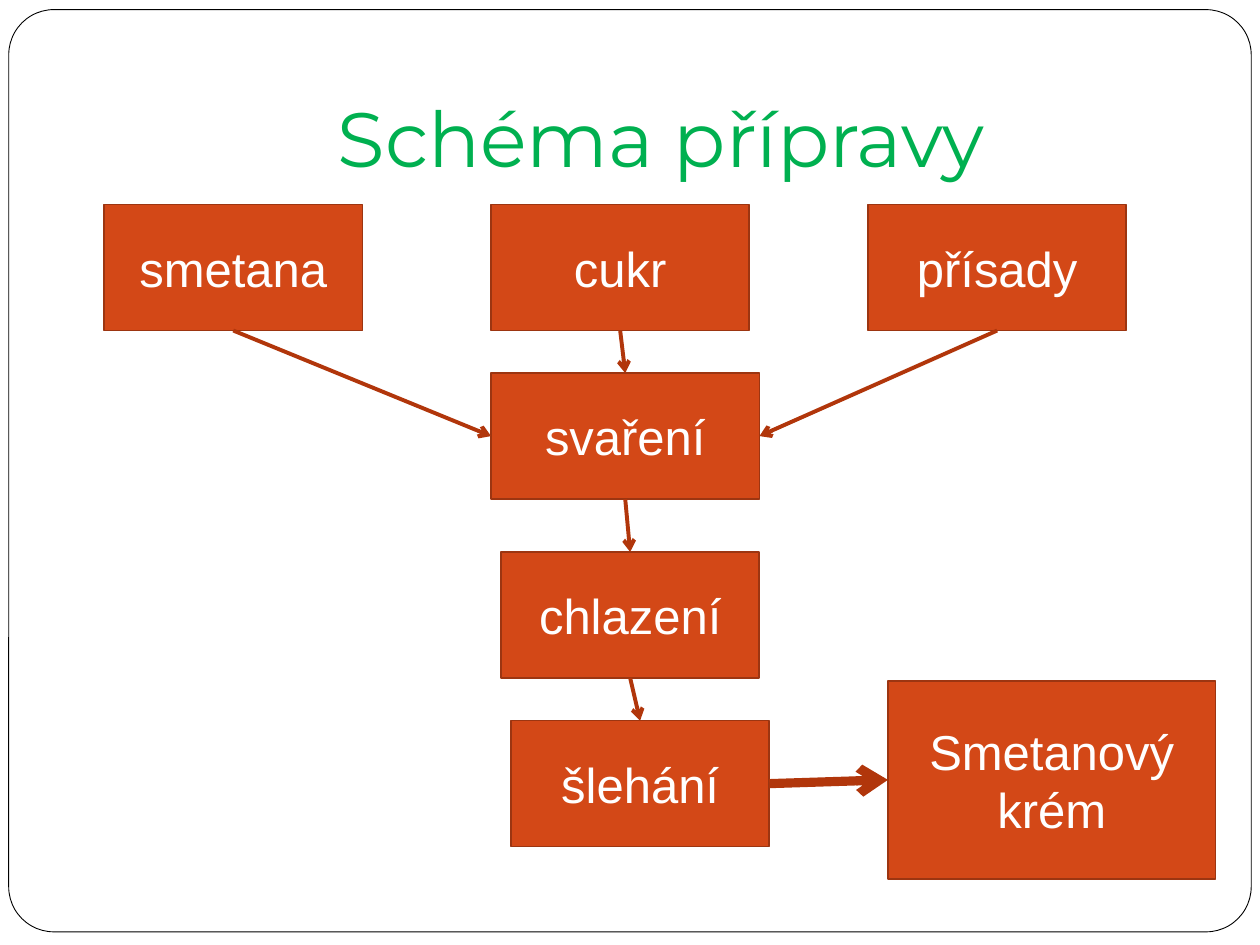
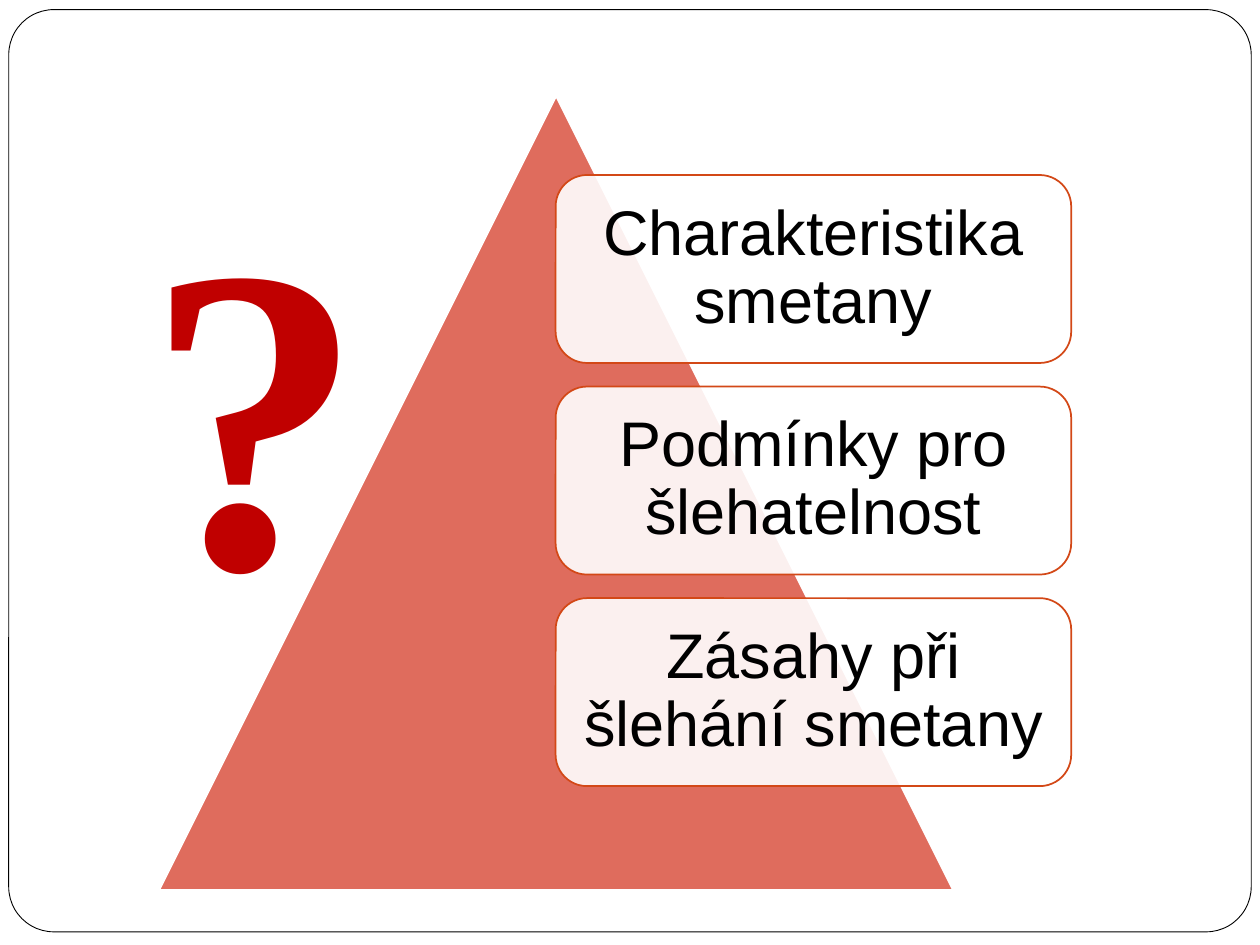
import pptx
import pptx.util
import pptx.dml.color
import pptx.enum.shapes
import pptx.enum.text
import pptx.oxml
import pptx.oxml.ns
import lxml.etree

Pt = pptx.util.Pt
SHAPE = pptx.enum.shapes.MSO_SHAPE
ALIGN = pptx.enum.text.PP_ALIGN
ANCHOR = pptx.enum.text.MSO_ANCHOR
qn = pptx.oxml.ns.qn

COLORS = {
    "white": "FFFFFF",
    "black": "000000",
    "title": "00B050",
    "orange": "D34817",
    "box_line": "9C3511",
    "arrow": "B1360B",
    "triangle": "DF6C5D",
    "question": "C00000",
}
TOP, LEFT, BOTTOM, RIGHT = range(4)


def rgb(name):
    return pptx.dml.color.RGBColor.from_string(COLORS[name])


def add_shape(slide, kind, box, fill, line, width=1):
    s = slide.shapes.add_shape(kind, *map(Pt, box))
    s.shadow.inherit = False
    s.fill.solid()
    s.fill.fore_color.rgb = rgb(fill)
    s.line.color.rgb = rgb(line)
    s.line.width = Pt(width)
    return s


def set_text(s, text, size, color, font="Arial", align=ALIGN.CENTER, anchor=ANCHOR.MIDDLE):
    tf = s.text_frame
    tf.word_wrap = True
    tf.auto_size = pptx.enum.text.MSO_AUTO_SIZE.NONE
    tf.vertical_anchor = anchor
    tf.text = text
    p = tf.paragraphs[0]
    p.alignment = align
    p.font.name = font
    p.font.size = Pt(size)
    p.font.color.rgb = rgb(color)
    return p


def add_frame(prs, slide):
    s = add_shape(slide, SHAPE.ROUNDED_RECTANGLE, (5, 5.5, 710, 527), "white", "black", 0.5)
    s.adjustments[0] = 0.049
    prs.slide_master.shapes.element.insert(2, s.element)


def add_title(slide, text):
    s = slide.shapes.title
    s.left, s.top, s.width, s.height = map(Pt, (72, 21.6, 612, 90))
    set_text(s, text, 44, "title", "Montserrat", anchor=ANCHOR.BOTTOM)
    s.text_frame.margin_bottom = Pt(7.2)


def add_step(slide, text, left, top, width=147.6, height=72):
    s = add_shape(slide, SHAPE.RECTANGLE, (left, top, width, height), "orange", "box_line")
    set_text(s, text, 28, "white")
    return s


def add_arrow(slide, start, start_side, end, end_side, width=2.25):
    c = slide.shapes.add_connector(pptx.enum.shapes.MSO_CONNECTOR.STRAIGHT, 0, 0, 0, 0)
    c.begin_connect(start, start_side)
    c.end_connect(end, end_side)
    c.line.color.rgb = rgb("arrow")
    c.line.width = Pt(width)
    sp_pr = c.element.spPr
    lxml.etree.SubElement(sp_pr.find(qn("a:ln")), qn("a:tailEnd"), type="arrow")
    lxml.etree.SubElement(sp_pr, qn("a:effectLst"))


def add_card(slide, text, top):
    s = add_shape(slide, SHAPE.ROUNDED_RECTANGLE, (317.5, top, 294.6, 107.4), "white", "orange")
    color = s.element.spPr.find(qn("a:solidFill"))[0]
    lxml.etree.SubElement(color, qn("a:alpha"), val="90000")
    set_text(s, text, 36, "black").line_spacing = 0.9
    s.text_frame.margin_left = s.text_frame.margin_right = Pt(5)


def build_scheme(slide):
    add_title(slide, "Schéma přípravy")
    cream = add_step(slide, "Smetanový krém", 507.4, 389, 187.2, 113.3)
    whipping = add_step(slide, "šlehání", 292, 411.8)
    cooling = add_step(slide, "chlazení", 286.3, 315.4)
    boiling = add_step(slide, "svaření", 280.6, 213.2, 153.4)
    sugar = add_step(slide, "cukr", 280.6, 116.9)
    milk = add_step(slide, "smetana", 59.5, 116.9)
    additives = add_step(slide, "přísady", 496, 116.9)
    add_arrow(slide, milk, BOTTOM, boiling, LEFT)
    add_arrow(slide, additives, BOTTOM, boiling, RIGHT)
    for start, end in ((sugar, boiling), (boiling, cooling), (cooling, whipping)):
        add_arrow(slide, start, BOTTOM, end, TOP)
    add_arrow(slide, whipping, RIGHT, cream, LEFT, 5.25)


def build_questions(slide):
    add_shape(slide, SHAPE.ISOSCELES_TRIANGLE, (91, 55, 453.6, 453.6), "triangle", "white")
    topics = ("Charakteristika smetany", "Podmínky pro šlehatelnost", "Zásahy při šlehání smetany")
    for i, topic in enumerate(topics):
        add_card(slide, topic, 100 + 120.9 * i)
    s = slide.shapes.add_textbox(*map(Pt, (76.3, 71.3, 96.5, 310.3)))
    p = set_text(s, "?", 250, "question", "Times New Roman", ALIGN.LEFT, ANCHOR.TOP)
    p.font.bold = True


def main():
    prs = pptx.Presentation()
    prs.slide_width, prs.slide_height = Pt(720), Pt(540)
    scheme = prs.slides.add_slide(prs.slide_layouts[5])
    add_frame(prs, scheme)
    build_scheme(scheme)
    build_questions(prs.slides.add_slide(prs.slide_layouts[6]))
    prs.save("out.pptx")


if __name__ == "__main__":
    main()
